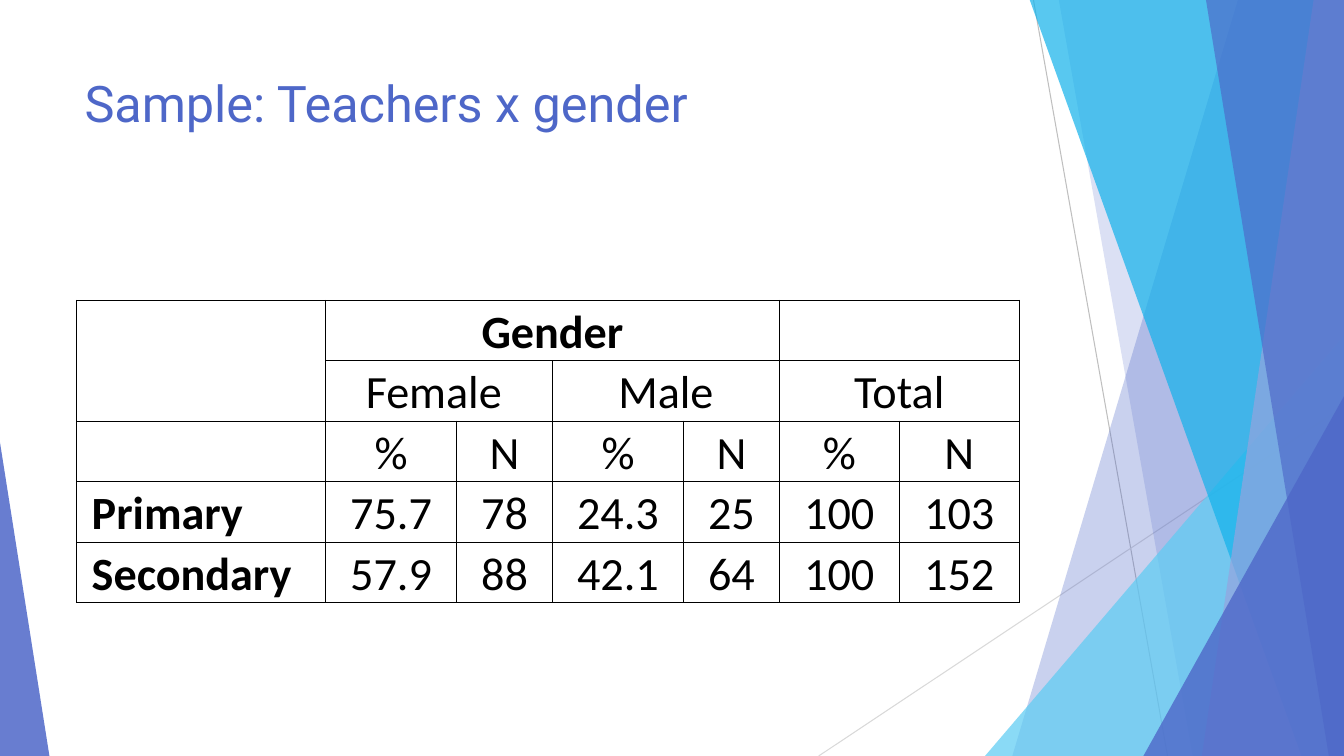
from lxml import etree
from pptx import Presentation
from pptx.dml.color import RGBColor
from pptx.enum import shapes, text
from pptx.oxml.ns import qn
from pptx.util import Inches, Pt

WIDTH, HEIGHT, TOP = 13.33, 7.5, -0.01
BLUE = "4E67C8"


def paint(fill, color, opacity=100):
    fill.solid()
    fill.fore_color.rgb = RGBColor.from_string(color)
    if opacity < 100:
        tint = fill._xPr.find(qn("a:solidFill"))[0]
        etree.SubElement(tint, qn("a:alpha"), val=str(opacity * 1000))


def border(cell, color="000000", points=1):
    props = cell._tc.get_or_add_tcPr()
    for side in ("a:lnL", "a:lnR", "a:lnT", "a:lnB"):
        line = etree.SubElement(props, qn(side), w=str(Pt(points)))
        solid = etree.SubElement(line, qn("a:solidFill"))
        etree.SubElement(solid, qn("a:srgbClr"), val=color)


deck = Presentation()
deck.slide_width, deck.slide_height = Inches(WIDTH), Inches(HEIGHT)
page = deck.slides.add_slide(deck.slide_layouts[6])

# Thin crossing lines
for x1, y1, x2, color in [(10.25, 0, 11.58, "BFBFBF"), (WIDTH, 4.03, 8.12, "D9D9D9")]:
    line = page.shapes.add_connector(
        shapes.MSO_CONNECTOR.STRAIGHT,
        Inches(x1), Inches(y1), Inches(x2), Inches(HEIGHT))
    paint(line.line.fill, color)
    line.line.width = Pt(0.75)
    etree.SubElement(line._element.spPr, qn("a:effectLst"))

# Ribbons: left edge at the top and at the bottom, all reach the right edge.
# Triangles: left, top, width and apex position, all stand on the bottom edge.
decoration = [
    ("ribbon", (12.28, 10.04), BLUE, 30),
    ("ribbon", (10.5, 11.83), BLUE, 20),
    ("triangle", (9.77, 3.33, 3.56, 1), "5ECCF3", 72),
    ("ribbon", (10.21, 12.91), "12B2EB", 70),
    ("ribbon", (13.03, 11.92), "95A4DE", 70),
    ("ribbon", (11.96, 13.18), BLUE, 65),
    ("triangle", (11.34, 3.93, 1.99, 1), BLUE, 80),
    ("triangle", (0, 4.39, 0.49, 0), BLUE, 85),
]
for kind, numbers, color, opacity in decoration:
    if kind == "ribbon":
        upper, lower = numbers
        outline = page.shapes.build_freeform(Inches(upper), Inches(TOP))
        corners = [(WIDTH, TOP), (WIDTH, HEIGHT), (lower, HEIGHT)]
        outline.add_line_segments([(Inches(x), Inches(y)) for x, y in corners])
        shape = outline.convert_to_shape()
    else:
        left, top, width, apex = numbers
        shape = page.shapes.add_shape(
            shapes.MSO_SHAPE.ISOSCELES_TRIANGLE,
            Inches(left), Inches(top), Inches(width), Inches(HEIGHT - top))
        shape.adjustments[0] = apex
    paint(shape.fill, color, opacity)
    shape.line.fill.background()
    shape.shadow.inherit = False

# Title
title = page.shapes.add_textbox(Inches(0.74), Inches(0.67), Inches(9.4), Inches(1.44))
title.text_frame.word_wrap = True
span = title.text_frame.paragraphs[0].add_run()
span.text = "Sample: Teachers x gender"
span.font.name, span.font.size = "Roboto", Pt(36)
paint(span.font.fill, BLUE)

# Table of teachers by gender
rows = [
    ["", "Gender", "", "", "", "", ""],
    ["", "Female ", "", "Male", "", "Total", ""],
    ["", "%", "N", "%", "N", "%", "N"],
    ["Primary", "75.7", "78", "24.3", "25", "100", "103"],
    ["Secondary", "57.9", "88", "42.1", "64", "100", "152"],
]
column_widths = [2.47, 1.3, 0.95, 1.3, 0.95, 1.19, 1.19]
merges = [((0, 0), (1, 0)), ((0, 1), (0, 4)), ((0, 5), (0, 6)),
          ((1, 1), (1, 2)), ((1, 3), (1, 4)), ((1, 5), (1, 6))]
cell_format = {"margin_left": Inches(0.15), "margin_right": Inches(0.15),
               "margin_top": 0, "margin_bottom": 0}

table = page.shapes.add_table(
    len(rows), len(column_widths),
    Inches(0.76), Inches(2.98), Inches(9.36), Inches(3.01)).table
for column, width in zip(table.columns, column_widths):
    column.width = Inches(width)
for row in table.rows:
    row.height = Inches(0.6)
for first, last in merges:
    table.cell(*first).merge(table.cell(*last))

for r, words in enumerate(rows):
    for c, word in enumerate(words):
        cell = table.cell(r, c)
        for name, value in cell_format.items():
            setattr(cell, name, value)
        border(cell)
        cell.fill.background()
        if not word:
            continue
        para = cell.text_frame.paragraphs[0]
        para.alignment = text.PP_ALIGN.CENTER if c else text.PP_ALIGN.LEFT
        para.line_spacing = 1.07
        span = para.add_run()
        span.text = word
        span.font.name, span.font.size = "Calibri", Pt(33)
        span.font.bold = c == 0 or r == 0
        paint(span.font.fill, "000000")

deck.save("out.pptx")
